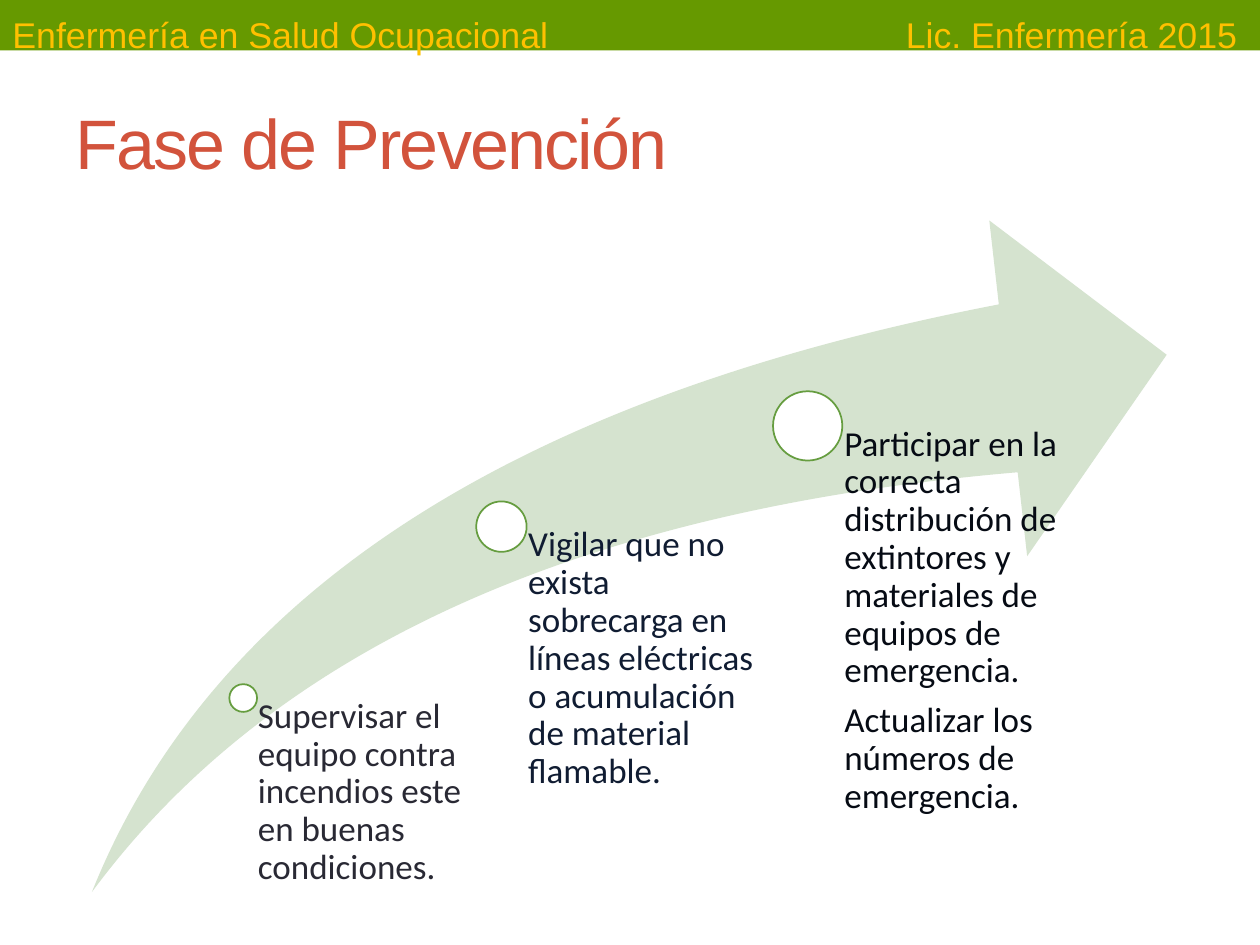
"""Build the fire prevention phase slide with a rising arrow of milestones."""
import pptx
import pptx.dml.color
import pptx.enum.shapes
import pptx.enum.text
import pptx.util
from lxml import etree

Inches = pptx.util.Inches
Pt = pptx.util.Pt
SHAPE = pptx.enum.shapes.MSO_SHAPE
ANCHOR = pptx.enum.text.MSO_ANCHOR


def rgb(value):
    return pptx.dml.color.RGBColor.from_string(value)


def write(p, text, font="Calibri", size=20, color="000000", spacing=None,
          before=0, after=0, line=1.0):
    p.space_before, p.space_after, p.line_spacing = Pt(before), Pt(after), line
    r = p.add_run()
    r.text = text
    r.font.name, r.font.size = font, Pt(size)
    r.font.color.rgb = rgb(color)
    if spacing is not None:
        r.font._element.set("spc", str(spacing * 100))


class Deck:
    GREEN, GOLD, RED = "669900", "FFC000", "D2533C"
    SWOOSH, RING, WHITE = "D5E3CF", "669D40", "FFFFFF"

    def __init__(self):
        self.prs = pptx.Presentation()
        self.prs.slide_width, self.prs.slide_height = Inches(10), Inches(7.5)
        self.s = self.prs.slides.add_slide(self.prs.slide_layouts[6])

    def shape(self, kind, x, y, w, h, fill, line=None):
        sp = self.s.shapes.add_shape(kind, Inches(x), Inches(y), Inches(w), Inches(h))
        sp.shadow.inherit = False
        sp.fill.solid()
        sp.fill.fore_color.rgb = rgb(fill)
        if line:
            sp.line.color.rgb = rgb(line)
            sp.line.width = Pt(1)
        else:
            sp.line.fill.background()
        return sp

    def text(self, x, y, w, h, paragraphs, inset=(0.1, 0.05, 0.1, 0.05),
             anchor=ANCHOR.TOP, **style):
        sp = self.s.shapes.add_textbox(Inches(x), Inches(y), Inches(w), Inches(h))
        tf = sp.text_frame
        tf.word_wrap = True
        tf.vertical_anchor = anchor
        tf.margin_left, tf.margin_top, tf.margin_right, tf.margin_bottom = map(Inches, inset)
        for i, content in enumerate(paragraphs):
            p = tf.add_paragraph() if i else tf.paragraphs[0]
            write(p, content, **style)

    def milestone(self, x, y, d, w, bottom, paragraphs, color):
        self.shape(SHAPE.OVAL, x - d / 2, y - d / 2, d, d, self.WHITE, self.RING)
        self.text(x, y, w, bottom - y, paragraphs, inset=(d * 0.53, 0, 0, 0),
                  color=color, after=7, line=0.9)


def main():
    deck = Deck()
    deck.shape(SHAPE.RECTANGLE, 0, 0, 10, 0.4, deck.GREEN)
    for x, w, label in [(0, 4.61, "Enfermería en Salud Ocupacional"),
                        (7.09, 2.91, "Lic. Enfermería 2015")]:
        deck.text(x, 0.05, w, 0.39, [label], font="Arial", size=20.4,
                  color=deck.GOLD, before=2)
    deck.text(0.5, 0.58, 9, 1.08, ["Fase de Prevención"], anchor=ANCHOR.MIDDLE,
              font="Arial", size=40, color=deck.RED, spacing=-1)

    top, height = 1.75, 5.33
    arrow = deck.shape(SHAPE.SWOOSH_ARROW, 0.73, top, 8.53, height, deck.SWOOSH)
    arrow.adjustments[0] = arrow.adjustments[1] = 0.25

    milestones = [
        (1.93, 5.54, 0.22, 1.99, "292934",
         ["Supervisar el equipo contra incendios este en buenas condiciones."]),
        (3.98, 4.18, 0.4, 2.05, "101C32",
         ["Vigilar que no exista sobrecarga en líneas eléctricas o acumulación "
          "de material flamable."]),
        (6.41, 3.38, 0.55, 2.05, "060B14",
         ["Participar en la correcta distribución de extintores y materiales "
          "de equipos de emergencia.",
          "Actualizar los números de emergencia."]),
    ]
    for x, y, d, w, color, paragraphs in milestones:
        deck.milestone(x, y, d, w, top + height, paragraphs, color)
    deck.prs.save("out.pptx")


if __name__ == "__main__":
    main()
